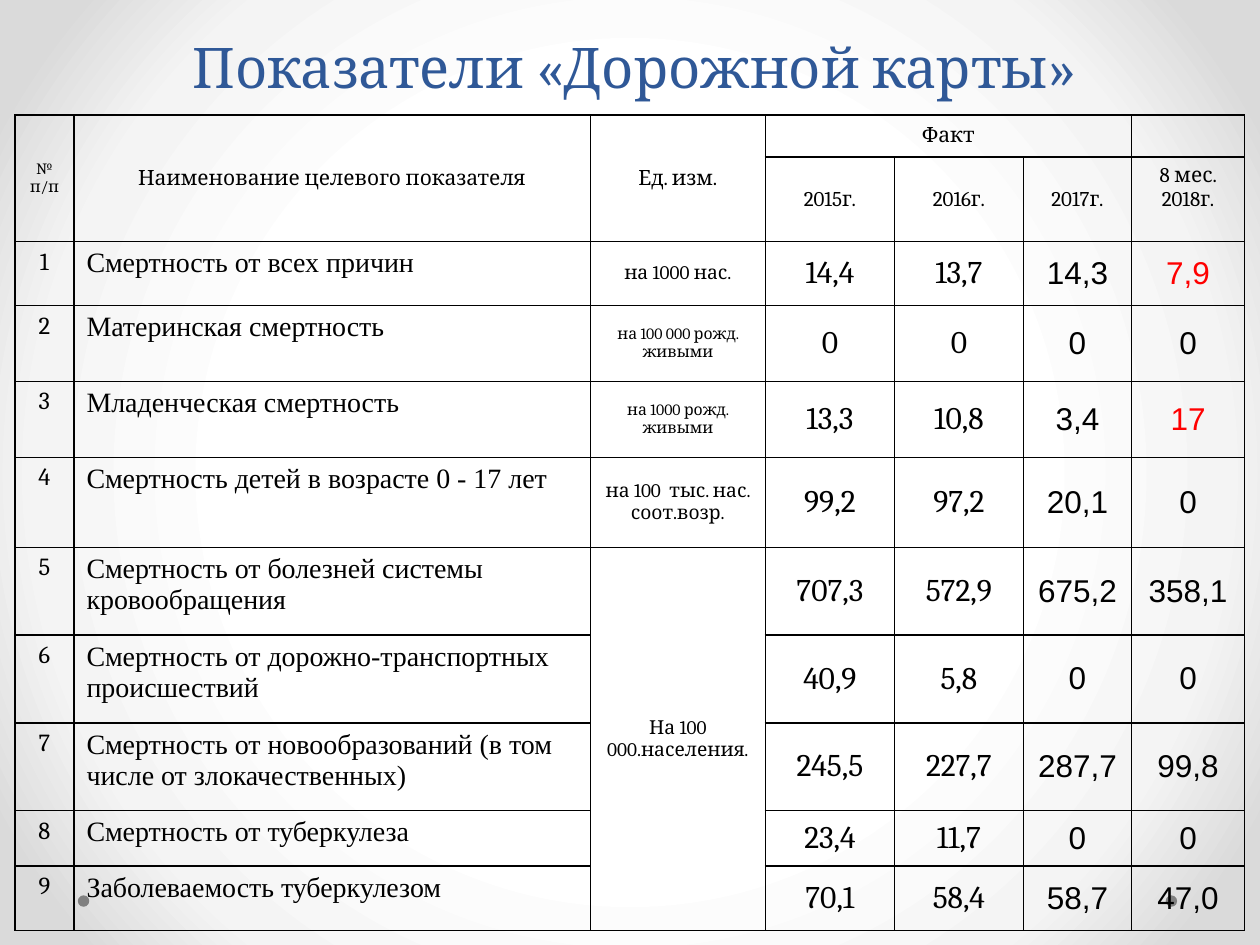
"""Build the slide with the road map mortality indicators."""
import pptx
import pptx.util
import pptx.dml.color
import pptx.enum.shapes
import pptx.enum.text
import pptx.oxml
import pptx.oxml.ns
import lxml.etree

Cm, Pt = pptx.util.Cm, pptx.util.Pt
qn = pptx.oxml.ns.qn
ALIGN, ANCHOR = pptx.enum.text.PP_ALIGN, pptx.enum.text.MSO_ANCHOR


def color(value):
    """Return the colour for a hex string."""
    return pptx.dml.color.RGBColor.from_string(value)


def write(cell, text, size, font="Cambria", ink="000000", align=ALIGN.CENTER, anchor=ANCHOR.MIDDLE):
    """Set and format the text of a table cell."""
    cell.text_frame.text = text
    cell.vertical_anchor = anchor
    paragraph = cell.text_frame.paragraphs[0]
    paragraph.alignment = align
    for run in paragraph.runs:
        run.font.size = Pt(size)
        run.font.name = font
        run.font.color.rgb = color(ink)


HEADINGS = [
    (0, 0, "№ п/п", 9),
    (0, 1, "Наименование целевого показателя", 12),
    (0, 2, "Ед. изм.", 12),
    (0, 3, "Факт", 12),
    (1, 3, "2015г.", 12),
    (1, 4, "2016г.", 12),
    (1, 5, "2017г.", 12),
    (1, 6, "8 мес. 2018г.", 12),
]
INDICATORS = [
    ("Смертность от всех причин", "14,4", "13,7", "14,3", "7,9"),
    ("Материнская смертность", "0", "0", "0", "0"),
    ("Младенческая смертность", "13,3", "10,8", "3,4", "17"),
    ("Смертность детей в возрасте 0 - 17 лет", "99,2", "97,2", "20,1", "0"),
    ("Смертность от болезней системы кровообращения", "707,3", "572,9", "675,2", "358,1"),
    ("Смертность от дорожно-транспортных происшествий", "40,9", "5,8", "0", "0"),
    ("Смертность от новообразований (в том числе от злокачественных)", "245,5", "227,7", "287,7", "99,8"),
    ("Смертность от туберкулеза", "23,4", "11,7", "0", "0"),
    ("Заболеваемость туберкулезом", "70,1", "58,4", "58,7", "47,0"),
]
UNITS = [
    ("на 1000 нас.", 11),
    ("на 100 000 рожд. живыми", 9),
    ("на 1000 рожд. живыми", 9),
    ("на 100  тыс. нас. соот.возр.", 11),
    ("На 100 000.населения.", 11),
]
ALARMING = ("7,9", "17")
COLUMN_WIDTHS = [1.19, 10.41, 3.53, 2.6, 2.6, 2.18, 2.28]
ROW_HEIGHTS = [0.84, 1.71, 1.29, 1.53, 1.53, 1.81, 1.77, 1.77, 1.77, 1.12, 1.3]
MERGES = [(0, 0, 1, 0), (0, 1, 1, 1), (0, 2, 1, 2), (0, 3, 0, 5), (6, 2, 10, 2)]

presentation = pptx.Presentation()
presentation.slide_width, presentation.slide_height = Cm(25.4), Cm(19.05)
slide = presentation.slides.add_slide(presentation.slide_layouts[5])

slide.background.fill.solid()
backdrop = slide.element.find(".//" + qn("p:bgPr"))
stops = "".join(
    f'<a:gs pos="{position}000"><a:srgbClr val="{shade}"/></a:gs>'
    for position, shade in [(50, "FFFFFF"), (76, "F4F4F4"), (92, "DADADA")]
)
backdrop.replace(backdrop[0], pptx.oxml.parse_xml(
    f'<a:gradFill {pptx.oxml.ns.nsdecls("a")} rotWithShape="1"><a:gsLst>{stops}</a:gsLst>'
    '<a:path path="circle"><a:fillToRect l="50000" t="50000" r="50000" b="50000"/></a:path></a:gradFill>'
))

for left in (23.5, 1.57):
    dot = slide.shapes.add_shape(pptx.enum.shapes.MSO_SHAPE.OVAL, Cm(left), Cm(18.05), Cm(0.23), Cm(0.23))
    dot.shadow.inherit = False
    dot.fill.solid()
    dot.fill.fore_color.rgb = color("808080")
    dot.line.fill.background()

title = slide.shapes.title
title.left, title.top, title.width, title.height = Cm(0.69), Cm(0), Cm(24.2), Cm(2.13)
title.text_frame.text = "Показатели «Дорожной карты»"
title.text_frame.auto_size = pptx.enum.text.MSO_AUTO_SIZE.NONE
title.text_frame.vertical_anchor = ANCHOR.BOTTOM
heading = title.text_frame.paragraphs[0]
heading.alignment = ALIGN.CENTER
heading.line_spacing = Pt(58)
heading.runs[0].font.size = Pt(32)
heading.runs[0].font.name = "Cambria"
heading.runs[0].font.color.rgb = color("2F5897")

table = slide.shapes.add_table(
    len(ROW_HEIGHTS), len(COLUMN_WIDTHS), Cm(0.3), Cm(2.32), Cm(sum(COLUMN_WIDTHS)), Cm(sum(ROW_HEIGHTS))
).table
table.first_row = table.horz_banding = False
for column, width in zip(table.columns, COLUMN_WIDTHS):
    column.width = Cm(width)
for row, height in zip(table.rows, ROW_HEIGHTS):
    row.height = Cm(height)
for top, left, bottom, right in MERGES:
    table.cell(top, left).merge(table.cell(bottom, right))

for row, column, text, size in HEADINGS:
    write(table.cell(row, column), text, size)
table.cell(1, 6).margin_bottom = Cm(0.61)

for number, (name, *values) in enumerate(INDICATORS, start=1):
    row = number + 1
    write(table.cell(row, 0), str(number), 14, anchor=ANCHOR.TOP)
    write(table.cell(row, 1), name, 16, "Times New Roman", align=ALIGN.LEFT, anchor=ANCHOR.TOP)
    for column, value in enumerate(values, start=3):
        font = "Cambria" if column < 5 else "Arial"
        ink = "FF0000" if value in ALARMING else "000000"
        write(table.cell(row, column), value, 18, font, ink)
for row, (unit, size) in enumerate(UNITS, start=2):
    write(table.cell(row, 2), unit, size)

for cell in table.iter_cells():
    cell.fill.background()
    properties = cell._tc.get_or_add_tcPr()
    for position, side in enumerate(("lnL", "lnR", "lnT", "lnB")):
        properties.insert(position, pptx.oxml.parse_xml(
            f'<a:{side} {pptx.oxml.ns.nsdecls("a")} w="12700"><a:solidFill>'
            f'<a:srgbClr val="000000"/></a:solidFill></a:{side}>'
        ))
    if not cell.text_frame.text:
        lxml.etree.SubElement(cell.text_frame.paragraphs[0]._p, qn("a:endParaRPr"), sz="1200")

presentation.save("out.pptx")
